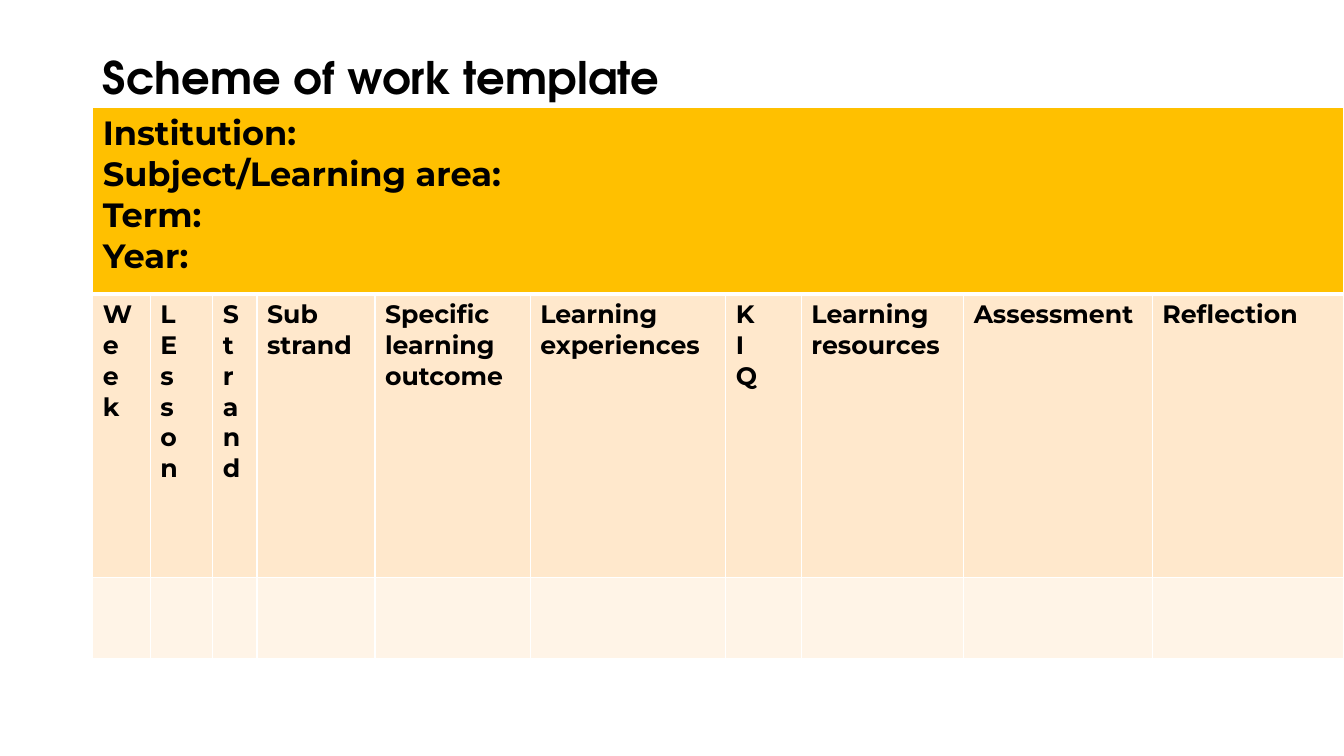
from dataclasses import dataclass

from lxml.etree import SubElement
from pptx import Presentation
from pptx.dml.color import RGBColor
from pptx.enum.text import MSO_ANCHOR as Anchor, PP_ALIGN as Align
from pptx.oxml.ns import qn
from pptx.table import _Cell as Cell
from pptx.text.text import TextFrame
from pptx.util import Inches, Pt

TITLE_FONT = "TeX Gyre Adventor"
TABLE_FONT = "Montserrat"
BLACK, WHITE = "000000", "FFFFFF"
GOLD, PEACH, CREAM = "FFC000", "FFE8CC", "FFF4E7"
ROW_HEIGHTS = (1.85, 2.81, 0.8)
DETAILS = ("Institution:", "Subject/Learning area:", "Term:", "Year:")


@dataclass(frozen=True)
class Column:
    width: float
    lines: tuple[str, ...]


COLUMNS = (
    Column(0.57, ("We", "e", "k")),
    Column(0.62, tuple("LEsson")),
    Column(0.44, tuple("Strand")),
    Column(1.17, ("Sub", "strand")),
    Column(1.54, ("Specific learning outcome",)),
    Column(1.94, ("Learning experiences",)),
    Column(0.75, tuple("KIQ")),
    Column(1.61, ("Learning resources",)),
    Column(1.87, ("Assessment",)),
    Column(1.9, ("Reflection",)),
)


def color(value: str) -> RGBColor:
    return RGBColor.from_string(value)


def write(frame: TextFrame, lines: tuple[str, ...], *, size: float, font: str,
          spacing: float = 1.0) -> None:
    for index, line in enumerate(lines):
        para = frame.paragraphs[0] if index == 0 else frame.add_paragraph()
        para.alignment = Align.LEFT
        para.line_spacing = spacing
        span = para.add_run()
        span.text = line
        span.font.size = Pt(size)
        span.font.name = font
        span.font.bold = True
        span.font.color.rgb = color(BLACK)


def style_cell(cell: Cell, fill: str, top: float = 1, bottom: float = 1) -> None:
    # Borders come before the fill in the cell properties
    properties = cell._tc.get_or_add_tcPr()
    for side, width in (("L", 1), ("R", 1), ("T", top), ("B", bottom)):
        line = SubElement(properties, qn(f"a:ln{side}"), w=str(Pt(width)))
        solid = SubElement(line, qn("a:solidFill"))
        SubElement(solid, qn("a:srgbClr"), val=WHITE)
    cell.fill.solid()
    cell.fill.fore_color.rgb = color(fill)


def main() -> None:
    deck = Presentation()
    deck.slide_width, deck.slide_height = Inches(13.33), Inches(7.5)
    page = deck.slides.add_slide(deck.slide_layouts[5])

    # Title
    title = page.shapes.title
    title.left, title.top = Inches(0.92), Inches(0.4)
    title.width, title.height = Inches(11.5), Inches(0.79)
    title.text_frame.vertical_anchor = Anchor.MIDDLE
    write(title.text_frame, ("Scheme of work template",), size=32,
          font=TITLE_FONT, spacing=0.9)

    # Table grid
    table = page.shapes.add_table(
        len(ROW_HEIGHTS), len(COLUMNS), Inches(0.92), Inches(1.07),
        Inches(sum(column.width for column in COLUMNS)),
        Inches(sum(ROW_HEIGHTS))).table
    for row, height in zip(table.rows, ROW_HEIGHTS):
        row.height = Inches(height)

    # Cells and column headings
    for index, column in enumerate(COLUMNS):
        table.columns[index].width = Inches(column.width)
        style_cell(table.cell(0, index), GOLD, bottom=3)
        style_cell(table.cell(1, index), PEACH, top=3)
        style_cell(table.cell(2, index), CREAM)
        write(table.cell(1, index).text_frame, column.lines, size=18,
              font=TABLE_FONT)

    # Details band across the top
    band = table.cell(0, 0)
    band.merge(table.cell(0, len(COLUMNS) - 1))
    write(band.text_frame, DETAILS, size=24, font=TABLE_FONT)

    deck.save("out.pptx")


if __name__ == "__main__":
    main()
